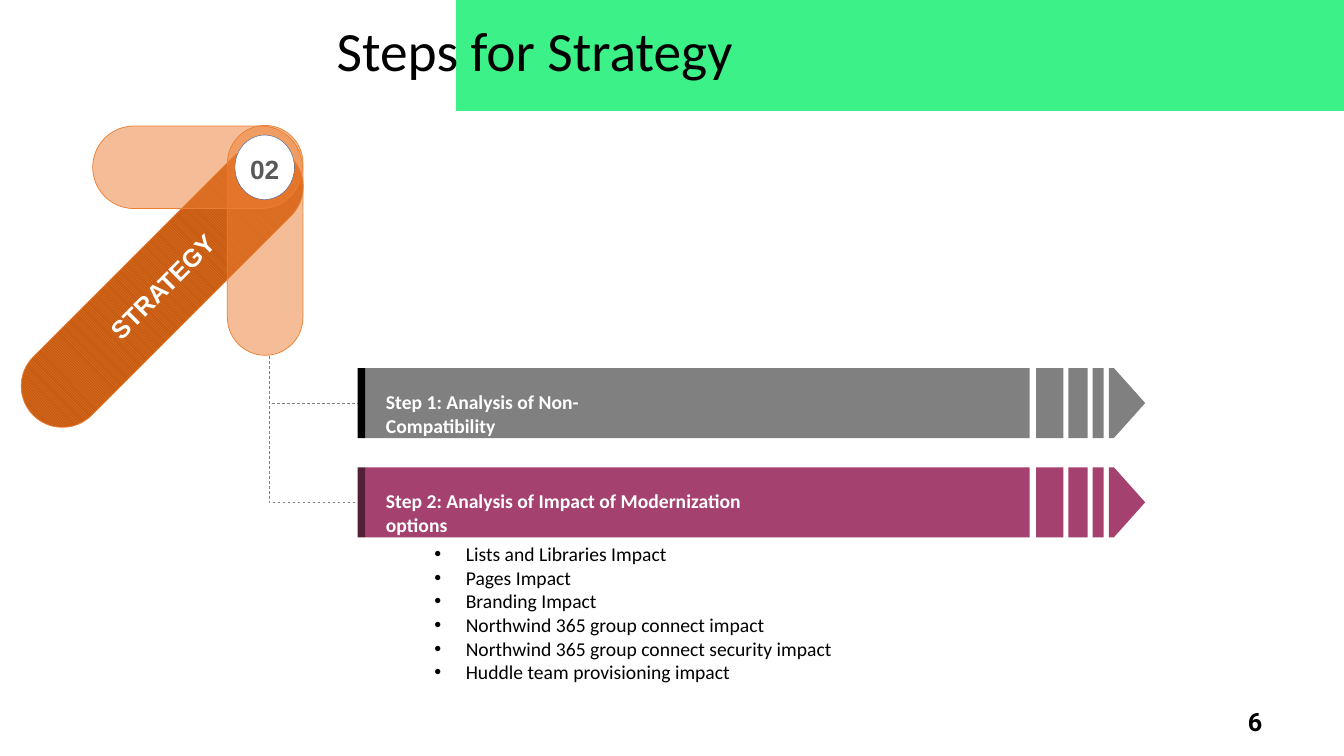
from lxml import etree
from pptx import Presentation
from pptx.dml.color import RGBColor
from pptx.enum.dml import MSO_LINE, MSO_PATTERN
from pptx.enum.shapes import MSO_CONNECTOR, MSO_SHAPE
from pptx.enum.text import MSO_ANCHOR, PP_ALIGN
from pptx.oxml.ns import qn
from pptx.util import Pt

RECTANGLE = MSO_SHAPE.RECTANGLE
PILL = MSO_SHAPE.ROUNDED_RECTANGLE
POINTER = MSO_SHAPE.PENTAGON
CIRCLE = MSO_SHAPE.OVAL
ELBOW = MSO_CONNECTOR.ELBOW
DASH = MSO_LINE.DASH
HATCH = MSO_PATTERN.DARK_DOWNWARD_DIAGONAL
MIDDLE = MSO_ANCHOR.MIDDLE
LEFT, CENTER = PP_ALIGN.LEFT, PP_ALIGN.CENTER

WHITE = RGBColor(0xFF, 0xFF, 0xFF)
BLACK = RGBColor(0, 0, 0)
GREEN = RGBColor(0x3B, 0xF1, 0x88)
GRAY = RGBColor(0x80, 0x80, 0x80)
DARK_GRAY = RGBColor(0x59, 0x59, 0x59)
PLUM = RGBColor(0xA4, 0x41, 0x6E)
DARK_PLUM = RGBColor(0x52, 0x1F, 0x37)
ORANGE = RGBColor(0xED, 0x7D, 0x31)
DARK_ORANGE = RGBColor(0xC5, 0x5A, 0x11)
BLUE = RGBColor(0x2F, 0x55, 0x97)

TITLE = "Steps for Strategy"
PAGE_NUMBER = "6"
STEPS = [
    ("Step 1: Analysis of Non-Compatibility", GRAY, BLACK, 224, 255.4),
    ("Step 2: Analysis of Impact of Modernization options", PLUM, DARK_PLUM, 306.7, 269.3),
]
IMPACTS = [
    "Lists and Libraries Impact",
    "Pages Impact",
    "Branding Impact",
    "Northwind 365 group connect impact",
    "Northwind 365 group connect security impact",
    "Huddle team provisioning impact",
]

STEP_TOP, STEP_PITCH, STEP_HEIGHT = 262.9, 70.9, 50
CAP = (255.4, 5.5)
BLOCKS = [(260.9, 474.7), (740.2, 19.4), (763.2, 13.7), (780.5, 7.9)]
TIP = (792, 26)
TRUNK_X, TRUNK_TOP = 192.2, 254.2
LABEL_LEFT, LABEL_DROP, LABEL_HEIGHT = 268.6, 12.2, 24.5
BULLET_INDENT = 22.5


def add_box(page, kind, left, top, width, height, color=None):
    box = page.shapes.add_shape(kind, Pt(left), Pt(top), Pt(width), Pt(height))
    box.shadow.inherit = False
    box.line.fill.background()
    if color is not None:
        box.fill.solid()
        box.fill.fore_color.rgb = color
    return box


def outline(box, color, weight):
    box.line.color.rgb = color
    box.line.width = Pt(weight)


def add_pill(page, left, top, width, height, rotation):
    pill = add_box(page, PILL, left, top, width, height, ORANGE)
    pill.adjustments[0] = 0.5
    pill.rotation = rotation
    outline(pill, ORANGE, 0.5)
    return pill


def make_translucent(box):
    color = box.fill._xPr.find(qn("a:solidFill"))[0]
    etree.SubElement(color, qn("a:alpha")).set("val", "50000")


def write(box, lines, font, size, color, bold=False, align=LEFT):
    frame = box.text_frame
    frame.word_wrap = True
    frame.text = "\n".join(lines)
    for para in frame.paragraphs:
        para.alignment = align
        for span in para.runs:
            span.font.name = font
            span.font.size = Pt(size)
            span.font.bold = bold
            span.font.color.rgb = color
    return frame


def write_centered(box, text, size, color):
    frame = write(box, [text], "Arial", size, color, True, CENTER)
    frame.vertical_anchor = MIDDLE
    frame.margin_left = frame.margin_right = frame.margin_top = frame.margin_bottom = 0
    return frame.paragraphs[0]


def add_text(page, left, top, width, height, lines, font, size, color, bold=False, align=LEFT):
    box = page.shapes.add_textbox(Pt(left), Pt(top), Pt(width), Pt(height))
    return write(box, lines, font, size, color, bold, align)


def add_branch(page, end_x, end_y):
    run, drop = end_x - TRUNK_X, end_y - TRUNK_TOP
    center_x, center_y = TRUNK_X + run / 2, TRUNK_TOP + drop / 2
    branch = page.shapes.add_connector(
        ELBOW,
        Pt(center_x + drop / 2), Pt(center_y - run / 2),
        Pt(center_x - drop / 2), Pt(center_y + run / 2),
    )
    properties = branch._element.spPr
    properties.find(qn("a:xfrm")).set("rot", "16200000")
    properties.find(qn("a:prstGeom")).set("prst", "bentConnector2")
    outline(branch, GRAY, 0.5)
    branch.line.dash_style = DASH
    etree.SubElement(properties, qn("a:effectLst"))


def add_step(page, index, label, color, cap_color, label_width, branch_end):
    top = STEP_TOP + index * STEP_PITCH
    add_branch(page, branch_end, top + STEP_HEIGHT / 2)
    for left, width in BLOCKS:
        add_box(page, RECTANGLE, left, top, width, STEP_HEIGHT, color)
    add_box(page, RECTANGLE, CAP[0], top, CAP[1], STEP_HEIGHT, cap_color)
    tip = add_box(page, POINTER, TIP[0], top, TIP[1], STEP_HEIGHT, color)
    tip.adjustments[0] = 0.86
    add_text(page, LABEL_LEFT, top + LABEL_DROP, label_width, LABEL_HEIGHT,
             [label], "Calibri", 14, WHITE, True)


def add_strategy(page):
    blade = add_pill(page, -14.4, 175, 260.6, 59, 315)
    blade.fill.patterned()
    blade.fill.pattern = HATCH
    blade.fill.fore_color.rgb = ORANGE
    blade.fill.back_color.rgb = DARK_ORANGE
    write_centered(blade, "STRATEGY", 18, WHITE).space_after = Pt(2.2)
    make_translucent(add_pill(page, 107.3, 144.7, 164.2, 54, 270))
    make_translucent(add_pill(page, 66.2, 90, 149.8, 59, 0))
    badge = add_box(page, CIRCLE, 167.8, 96.5, 42.5, 46.1, WHITE)
    outline(badge, BLUE, 0.25)
    write_centered(badge, "02", 18.8, DARK_GRAY).line_spacing = Pt(25.5)


def add_impacts(page):
    frame = add_text(page, 303.1, 383.8, 450, 108.7, IMPACTS, "Calibri", 14, BLACK)
    for para in frame.paragraphs:
        properties = para._p.get_or_add_pPr()
        properties.set("marL", str(Pt(BULLET_INDENT)))
        properties.set("indent", str(-Pt(BULLET_INDENT)))
        etree.SubElement(properties, qn("a:buFont")).set("typeface", "Arial")
        etree.SubElement(properties, qn("a:buChar")).set("char", "•")


def main():
    deck = Presentation()
    deck.slide_width, deck.slide_height = Pt(960), Pt(540)
    page = deck.slides.add_slide(deck.slide_layouts[5])

    title = page.shapes.title
    title.left, title.top, title.width, title.height = Pt(233.3), Pt(13), Pt(675.4), Pt(51.1)
    frame = write(title, [TITLE], "Calibri", 39.6, BLACK)
    frame.vertical_anchor = MIDDLE
    frame.paragraphs[0].line_spacing = 0.9
    band = add_box(page, RECTANGLE, 325.6, 0, 634.4, 79.2, GREEN)
    title._element.addprevious(band._element)

    for index, step in enumerate(STEPS):
        add_step(page, index, *step)
    add_strategy(page)
    add_impacts(page)
    add_text(page, 850.3, 501.1, 92.2, 28.8, [PAGE_NUMBER], "Roboto", 18, BLACK, True, CENTER)
    deck.save("out.pptx")


if __name__ == "__main__":
    main()
